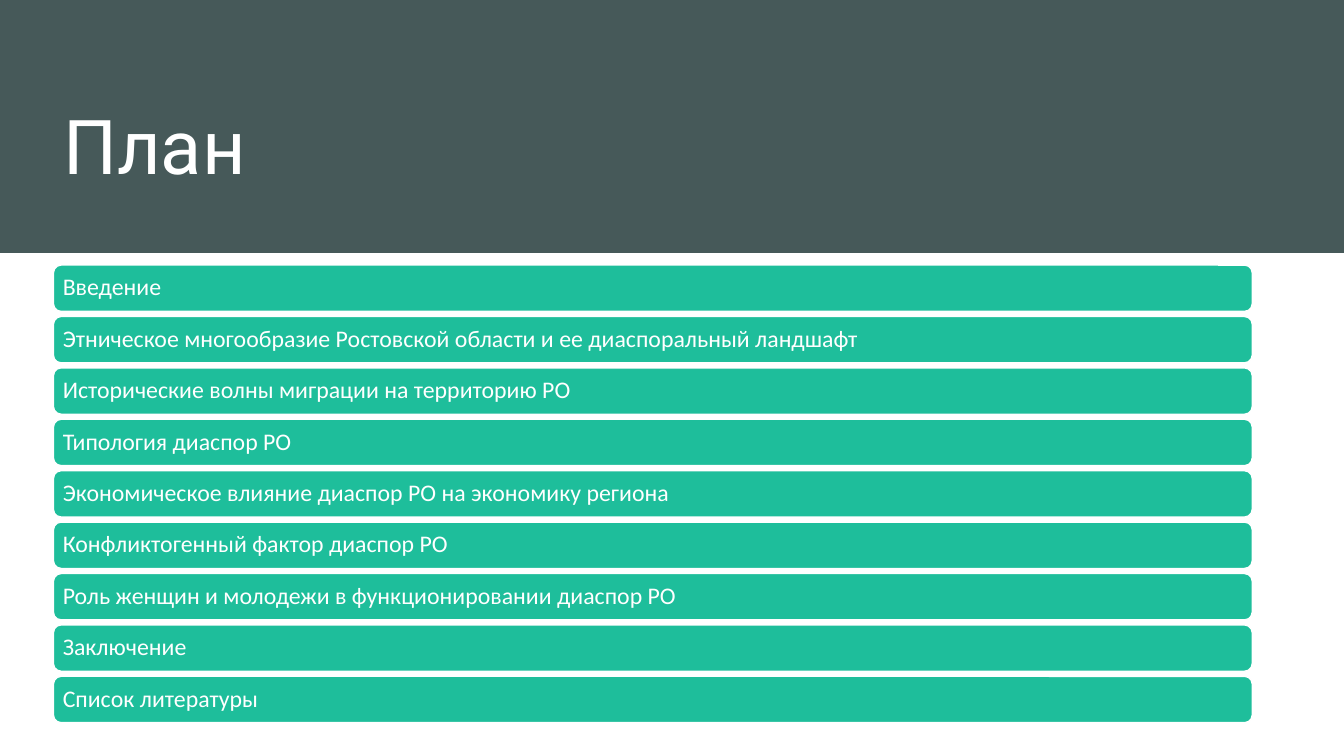
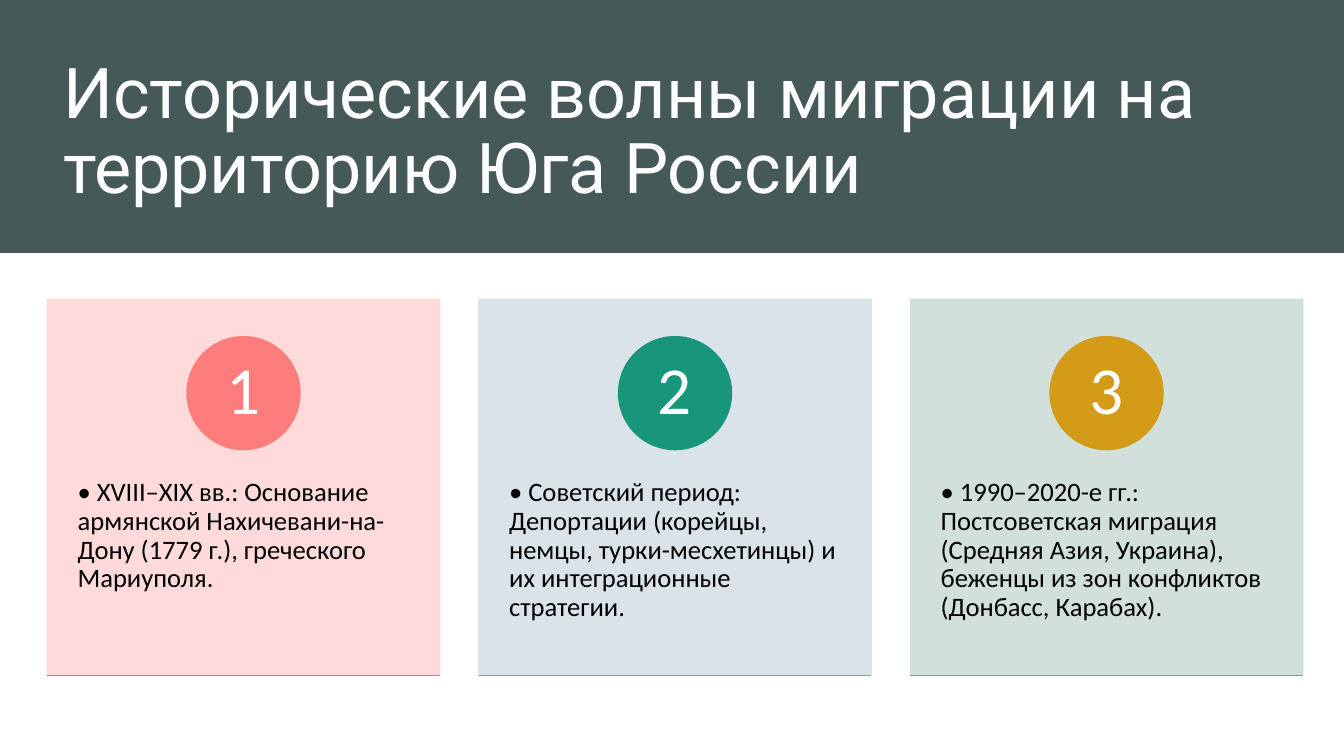
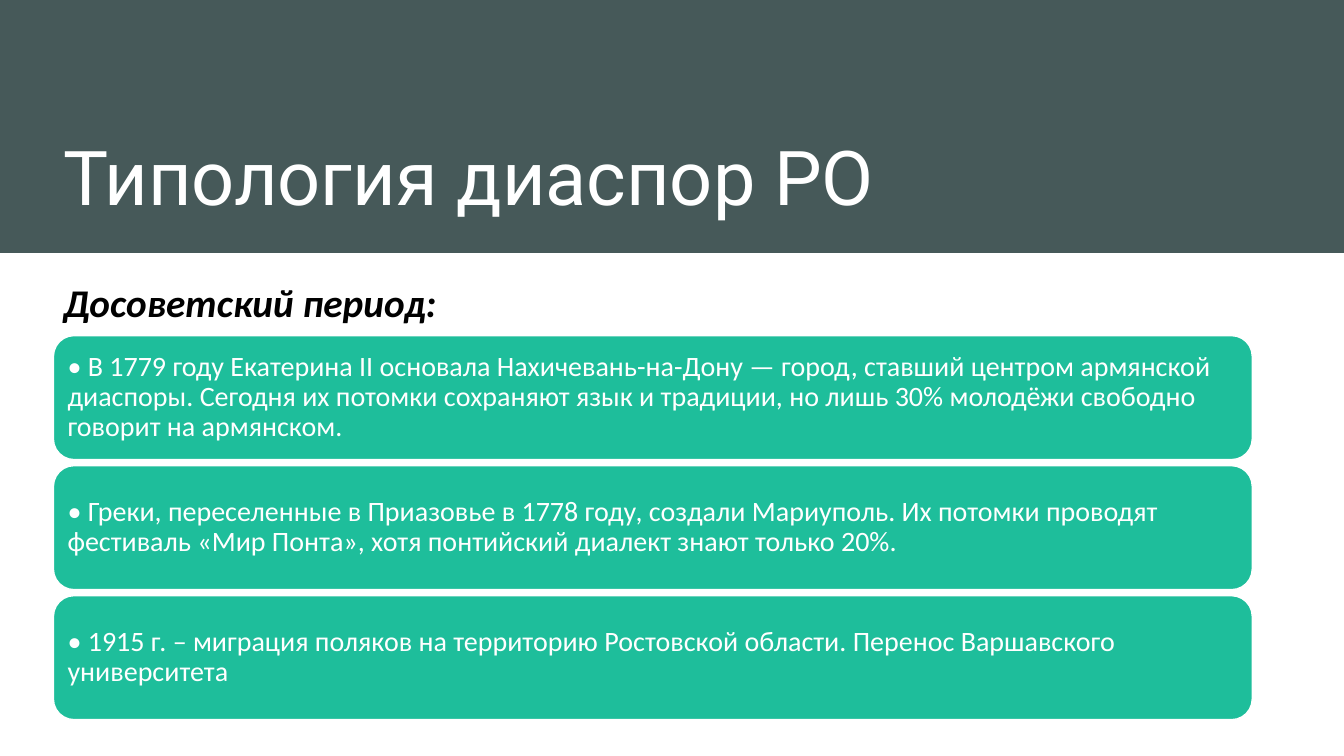
from lxml.etree import SubElement
from pptx import Presentation
from pptx.dml.color import RGBColor
from pptx.enum.shapes import MSO_CONNECTOR, MSO_SHAPE
from pptx.enum.text import MSO_ANCHOR as ANCHOR, PP_ALIGN as ALIGN
from pptx.oxml.ns import qn
from pptx.util import Inches, Pt

COLORS = {
    "band": "465959", "bar": "1EBE9B", "white": "FFFFFF", "black": "000000",
    "rule": "8C9A9A",
    "card 1": "FED7D7", "card 2": "D7E1E5", "card 3": "CCDDD7",
    "circle 1": "FD7C7C", "circle 2": "17967B", "circle 3": "D39B17",
}
COLORS = {name: RGBColor.from_string(value) for name, value in COLORS.items()}
MARGIN, CONTENT_WIDTH = 0.53, 11.89

presentation = Presentation()
presentation.slide_width, presentation.slide_height = Inches(13.33), Inches(7.5)


def add_text(shape, text, size, color="white", font="Calibri", insets=(0.1, 0.05),
             anchor=ANCHOR.MIDDLE, align=ALIGN.LEFT, line_spacing=0.9):
    """Fill a shape with one paragraph; insets are horizontal and vertical inches."""
    frame = shape.text_frame
    frame.word_wrap = True
    frame.vertical_anchor = anchor
    frame.margin_left = frame.margin_right = Inches(insets[0])
    frame.margin_top = frame.margin_bottom = Inches(insets[1])
    paragraph = frame.paragraphs[0]
    paragraph.text = text
    paragraph.alignment = align
    paragraph.line_spacing = line_spacing
    paragraph.font.name = font
    paragraph.font.size = Pt(size)
    paragraph.font.color.rgb = COLORS[color]
    return paragraph


def add_shape(slide, kind, left, top, width, height, fill, line=None):
    shape = slide.shapes.add_shape(
        kind, Inches(left), Inches(top), Inches(width), Inches(height))
    shape.shadow.inherit = False
    shape.fill.solid()
    shape.fill.fore_color.rgb = COLORS[fill]
    if line:
        shape.line.color.rgb = COLORS[line]
        shape.line.width = Pt(1)
    else:
        shape.line.fill.background()
    return shape


# Band and title of every slide: text, top, height, size
titles = [
    ("План", 0.09, 1.85, 54),
    ("Исторические волны миграции на территорию Юга России", 0.4, 1.72, 50),
    ("Типология диаспор РО", 0.4, 1.85, 54),
]
slides = []
for title, top, height, size in titles:
    slide = presentation.slides.add_slide(presentation.slide_layouts[6])
    add_shape(slide, MSO_SHAPE.RECTANGLE, 0, 0, 13.33, 2.51, "band")
    title_box = slide.shapes.add_textbox(
        Inches(MARGIN), Inches(top), Inches(CONTENT_WIDTH), Inches(height))
    add_text(title_box, title, size, font="Roboto", anchor=ANCHOR.BOTTOM)
    slides.append(slide)
plan_slide, waves_slide, typology_slide = slides

# Bars of the plan and of the typology
plan_items = [
    "Введение",
    "Этническое многообразие Ростовской области и ее диаспоральный ландшафт",
    "Исторические волны миграции на территорию РО",
    "Типология диаспор РО",
    "Экономическое влияние диаспор РО на экономику региона",
    "Конфликтогенный фактор диаспор РО",
    "Роль женщин и молодежи в функционировании диаспор РО",
    "Заключение",
    "Список литературы",
]
diasporas = [
    "• В 1779 году Екатерина II основала Нахичевань-на-Дону — город, ставший центром "
    "армянской диаспоры. Сегодня их потомки сохраняют язык и традиции, но лишь 30% "
    "молодёжи свободно говорит на армянском.",
    "• Греки, переселенные в Приазовье в 1778 году, создали Мариуполь. Их потомки "
    "проводят фестиваль «Мир Понта», хотя понтийский диалект знают только 20%.",
    "• 1915 г. – миграция поляков на территорию Ростовской области. Перенос "
    "Варшавского университета",
]
bar_lists = [
    (plan_slide, plan_items, 2.63, 0.46, 0.51, 17, 0.07),
    (typology_slide, diasporas, 3.33, 1.23, 1.29, 20, 0.08),
]
for slide, items, first_top, height, pitch, size, inset in bar_lists:
    for row, item in enumerate(items):
        bar = add_shape(slide, MSO_SHAPE.ROUNDED_RECTANGLE, MARGIN, first_top + row * pitch,
                        CONTENT_WIDTH, height, "bar", "white")
        add_text(bar, item, size, insets=(inset, inset))

# Three numbered cards of the migration waves
waves = [
    "• XVIII–XIX вв.: Основание армянской Нахичевани-на-Дону (1779 г.), греческого "
    "Мариуполя.",
    "• Советский период: Депортации (корейцы, немцы, турки-месхетинцы) и их "
    "интеграционные стратегии.",
    "• 1990–2020-е гг.: Постсоветская миграция (Средняя Азия, Украина), беженцы из зон "
    "конфликтов (Донбасс, Карабах).",
]
card_top, card_width, card_height, card_pitch = 2.97, 3.89, 3.73, 4.28
circle_size = 1.12
for number, wave in enumerate(waves, start=1):
    left = 0.47 + (number - 1) * card_pitch
    card_color = f"card {number}"
    card = add_shape(waves_slide, MSO_SHAPE.RECTANGLE, left, card_top,
                     card_width, card_height, card_color, card_color)
    for color in card.element.spPr.iter(qn("a:srgbClr")):
        SubElement(color, qn("a:alpha"), val="90000")
    add_text(card, wave, 19, "black", insets=(0.3, 0.36), anchor=ANCHOR.TOP)
    card.text_frame.margin_top = Inches(1.78)

    circle_color = f"circle {number}"
    circle = add_shape(waves_slide, MSO_SHAPE.OVAL, left + (card_width - circle_size) / 2,
                       3.34, circle_size, circle_size, circle_color, circle_color)
    add_text(circle, str(number), 48, insets=(0.09, 0.01), align=ALIGN.CENTER)

    bottom = Inches(card_top + card_height)
    rule = waves_slide.shapes.add_connector(
        MSO_CONNECTOR.STRAIGHT, Inches(left), bottom, Inches(left + card_width), bottom)
    rule.line.color.rgb = COLORS["rule"]
    rule.line.width = Pt(0.75)
    SubElement(rule.element.spPr, qn("a:effectLst"))

# Heading above the typology bars
period_box = typology_slide.shapes.add_textbox(
    Inches(MARGIN), Inches(2.71), Inches(7.12), Inches(0.57))
period = add_text(period_box, "Досоветский период:", 28, "black",
                  anchor=ANCHOR.TOP, line_spacing=1.0)
period.font.bold = period.font.italic = True

presentation.save("out.pptx")
